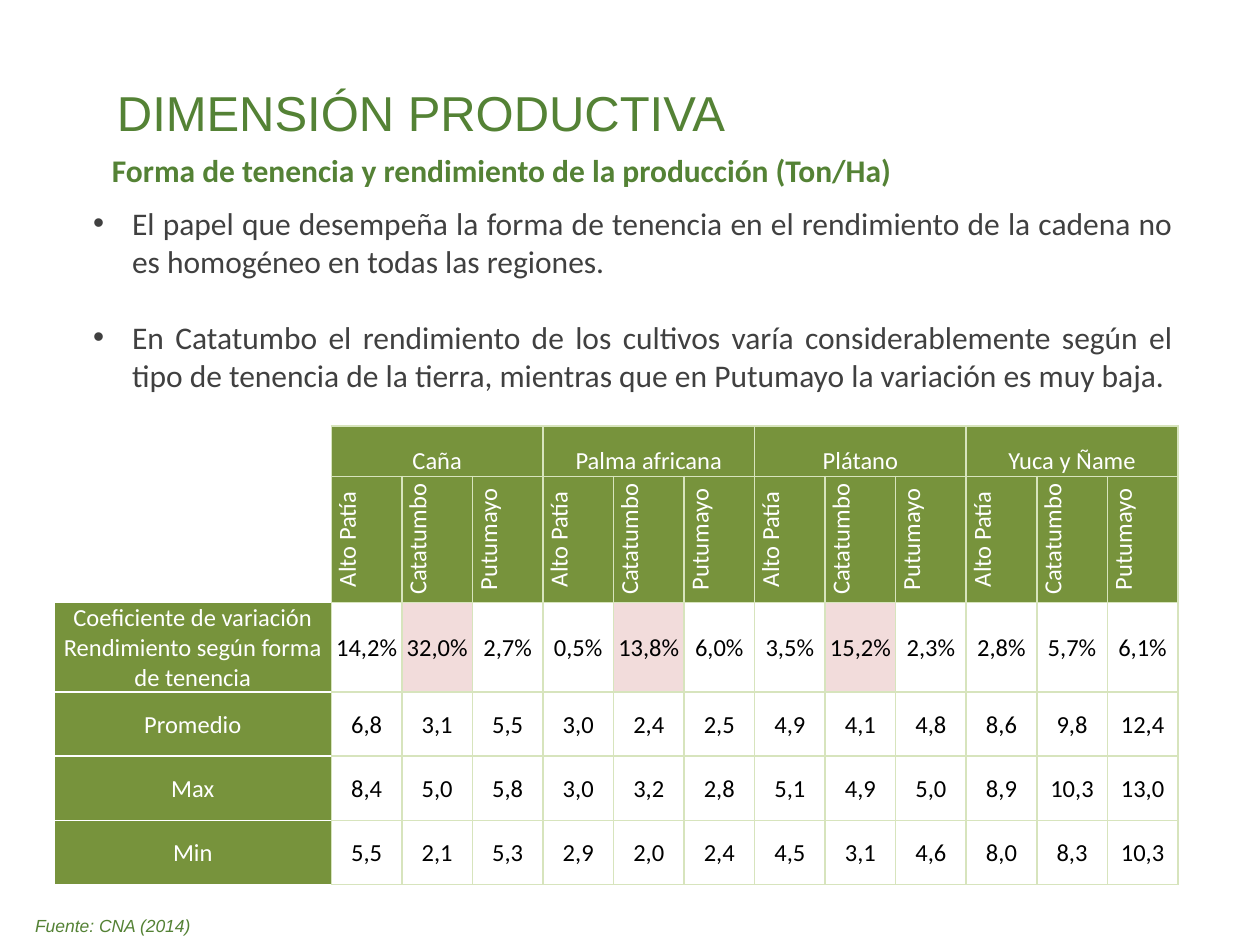
from lxml.etree import SubElement
from pptx import Presentation
from pptx.dml.color import RGBColor
from pptx.enum.text import MSO_ANCHOR as Anchor, PP_ALIGN as Align
from pptx.oxml.ns import qn
from pptx.util import Inches, Pt

GREEN, OLIVE, PALE_GREEN = "548235", "77933C", "D7E4BD"
PINK, GRAY, WHITE, BLACK = "F2DCDB", "404040", "FFFFFF", "000000"

TITLE = "DIMENSIÓN PRODUCTIVA"
SUBTITLE = "Forma de tenencia y rendimiento de la producción (Ton/Ha)"
BULLETS = [
    "El papel que desempeña la forma de tenencia en el rendimiento de la cadena "
    "no es homogéneo en todas las regiones.",
    "En Catatumbo el rendimiento de los cultivos varía considerablemente según el "
    "tipo de tenencia de la tierra, mientras que en Putumayo la variación es muy baja.",
]
SOURCE = "Fuente: CNA (2014)"

CROPS = ["Caña", "Palma africana", "Plátano", "Yuca y Ñame"]
REGIONS = ["Alto Patía", "Catatumbo", "Putumayo"]
MEASURES = [
    (["Coeficiente de variación", "Rendimiento según forma de tenencia"],
     ["14,2%", "32,0%", "2,7%", "0,5%", "13,8%", "6,0%",
      "3,5%", "15,2%", "2,3%", "2,8%", "5,7%", "6,1%"]),
    (["Promedio"],
     ["6,8", "3,1", "5,5", "3,0", "2,4", "2,5", "4,9", "4,1", "4,8", "8,6", "9,8", "12,4"]),
    (["Max"],
     ["8,4", "5,0", "5,8", "3,0", "3,2", "2,8", "5,1", "4,9", "5,0", "8,9", "10,3", "13,0"]),
    (["Min"],
     ["5,5", "2,1", "5,3", "2,9", "2,0", "2,4", "4,5", "3,1", "4,6", "8,0", "8,3", "10,3"]),
]
HIGHLIGHTS = {"32,0%", "13,8%", "15,2%"}
COLUMN_WIDTHS = [2.2] + [0.56] * len(CROPS) * len(REGIONS)
ROW_HEIGHTS = [0.26, 1, 0.71, 0.51, 0.51, 0.51]


def rgb(color):
    return RGBColor.from_string(color)


def add_run(paragraph, text, size, color, font="Calibri", bold=False, italic=False):
    run = paragraph.add_run()
    run.text = text
    run.font.name, run.font.size = font, Pt(size)
    run.font.bold, run.font.italic = bold, italic
    run.font.color.rgb = rgb(color)


def add_text_frame(slide, left, top, width, height, wrap=True, anchor=Anchor.TOP):
    box = slide.shapes.add_textbox(*map(Inches, (left, top, width, height)))
    frame = box.text_frame
    frame.word_wrap, frame.vertical_anchor = wrap, anchor
    return frame


def add_bullets(frame):
    for index, text in enumerate(BULLETS):
        paragraph = frame.paragraphs[0] if index == 0 else frame.add_paragraph()
        paragraph.alignment = Align.JUSTIFY
        if index:
            paragraph.space_before = Pt(22)
        properties = paragraph._p.get_or_add_pPr()
        properties.set("marL", str(Inches(0.31)))
        properties.set("indent", str(-Inches(0.31)))
        SubElement(properties, qn("a:buFont"), typeface="Arial")
        SubElement(properties, qn("a:buChar"), char="•")
        add_run(paragraph, text, 18, GRAY)


def set_borders(cell, is_label):
    properties = cell._tc.get_or_add_tcPr()
    for side in "LRTB":
        line = SubElement(properties, qn(f"a:ln{side}"), w=str(Pt(1)))
        fill = SubElement(line, qn("a:solidFill"))
        color = WHITE if is_label and side != "R" else PALE_GREEN
        SubElement(fill, qn("a:srgbClr"), val=color)


def fill_cell(cell, lines, color, fill=None, anchor=Anchor.MIDDLE):
    cell.vertical_anchor = anchor
    cell.margin_left = cell.margin_right = cell.margin_top = Inches(0.01)
    cell.margin_bottom = 0
    if fill:
        cell.fill.solid()
        cell.fill.fore_color.rgb = rgb(fill)
    for index, text in enumerate(lines):
        frame = cell.text_frame
        paragraph = frame.paragraphs[0] if index == 0 else frame.add_paragraph()
        paragraph.alignment = Align.CENTER
        add_run(paragraph, text, 14, color)


def add_yield_table(slide):
    size = len(ROW_HEIGHTS), len(COLUMN_WIDTHS)
    frame = slide.shapes.add_table(*size, Inches(0.43), Inches(3.38),
                                   Inches(sum(COLUMN_WIDTHS)), Inches(sum(ROW_HEIGHTS)))
    table = frame.table
    table.first_row = table.horz_banding = False
    for column, width in zip(table.columns, COLUMN_WIDTHS):
        column.width = Inches(width)
    for row, height in zip(table.rows, ROW_HEIGHTS):
        row.height = Inches(height)
        for index, cell in enumerate(row.cells):
            set_borders(cell, is_label=index == 0)
            cell.fill.background()

    for crop_index, crop in enumerate(CROPS):
        first = 1 + crop_index * len(REGIONS)
        heading = table.cell(0, first)
        heading.merge(table.cell(0, first + len(REGIONS) - 1))
        fill_cell(heading, [crop], WHITE, OLIVE, Anchor.BOTTOM)
        for column, region in enumerate(REGIONS, first):
            cell = table.cell(1, column)
            fill_cell(cell, [region], WHITE, OLIVE)
            cell._tc.get_or_add_tcPr().set("vert", "vert270")

    for row, (label, values) in enumerate(MEASURES, 2):
        fill_cell(table.cell(row, 0), label, WHITE, OLIVE)
        for column, value in enumerate(values, 1):
            fill = PINK if value in HIGHLIGHTS else None
            fill_cell(table.cell(row, column), [value], BLACK, fill)


def main():
    presentation = Presentation()
    presentation.slide_width, presentation.slide_height = Inches(10), Inches(7.5)
    slide = presentation.slides.add_slide(presentation.slide_layouts[6])

    title = add_text_frame(slide, 0.83, 0.36, 8.66, 1.05, anchor=Anchor.MIDDLE)
    add_run(title.paragraphs[0], TITLE, 28, GREEN, "Arial")
    subtitle = add_text_frame(slide, 0.79, 1.15, 6.44, 0.4, wrap=False)
    add_run(subtitle.paragraphs[0], SUBTITLE, 18, GREEN, bold=True)
    add_yield_table(slide)
    add_bullets(add_text_frame(slide, 0.64, 1.57, 8.77, 1.92))
    source = add_text_frame(slide, 0.18, 7.21, 9.29, 0.27)
    add_run(source.paragraphs[0], SOURCE, 10, GREEN, "Arial", italic=True)

    presentation.save("out.pptx")


if __name__ == "__main__":
    main()
